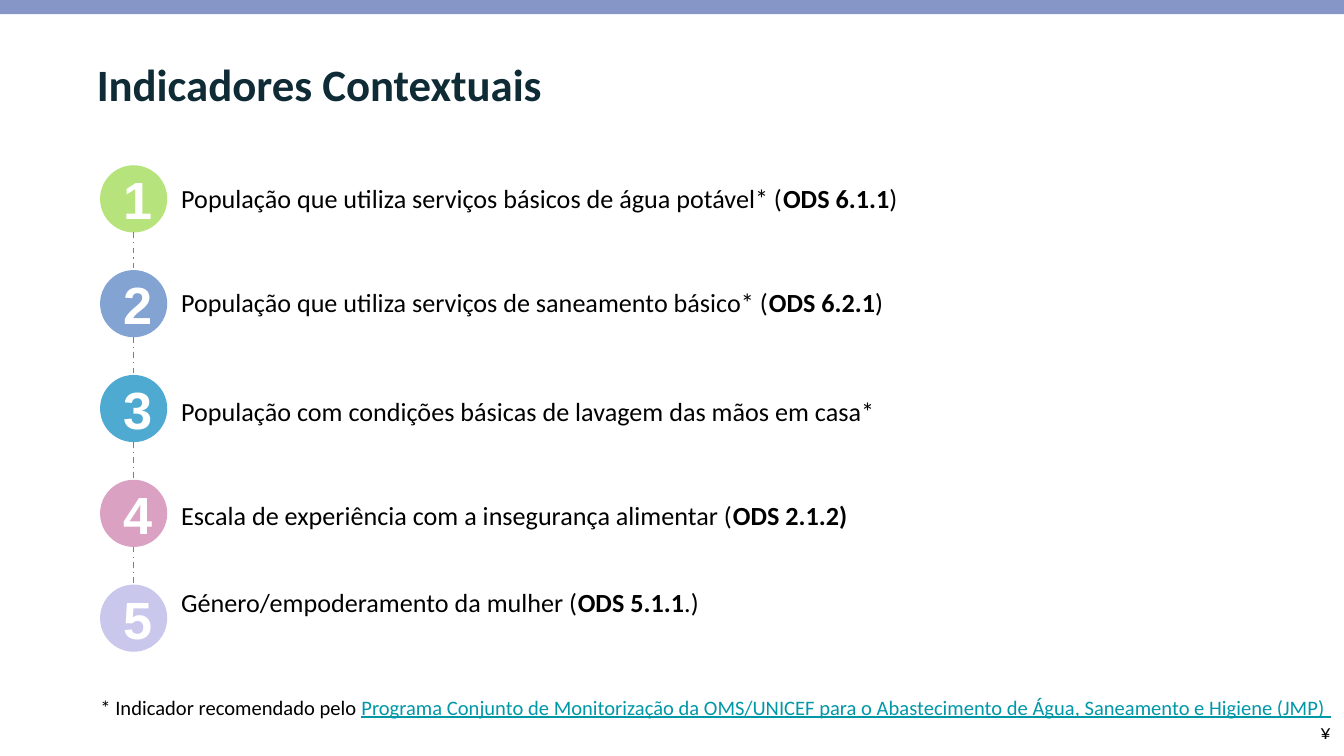
from lxml import etree
from pptx import Presentation
from pptx.dml.color import RGBColor
from pptx.enum.dml import MSO_LINE
from pptx.enum.shapes import MSO_CONNECTOR, MSO_SHAPE
from pptx.enum.text import MSO_ANCHOR, MSO_AUTO_SIZE, PP_ALIGN
from pptx.oxml.ns import qn
from pptx.util import Pt

PX = 4572
LEFT, CENTER, RIGHT = PP_ALIGN.LEFT, PP_ALIGN.CENTER, PP_ALIGN.RIGHT
MIDDLE, TOP = MSO_ANCHOR.MIDDLE, MSO_ANCHOR.TOP
GROW, NO_FIT = MSO_AUTO_SIZE.SHAPE_TO_FIT_TEXT, MSO_AUTO_SIZE.NONE
DASH_DOT = MSO_LINE.DASH_DOT
RECTANGLE, OVAL = MSO_SHAPE.RECTANGLE, MSO_SHAPE.OVAL
STRAIGHT = MSO_CONNECTOR.STRAIGHT

COLORS = {
    "band": "8696C7", "title": "0F2B36", "text": "000000", "number": "FFFFFF",
    "link": "0097A7", "connector": "7F7F7F",
    "water": "B6E37C", "sanitation": "83A3D3", "hygiene": "4FAAD1",
    "food": "DBA1C2", "gender": "CAC7EC",
}
SLIDE_WIDTH, SLIDE_HEIGHT = 2000, 1125
BADGE_LEFT, BADGE_TOP, BADGE_SIZE, BADGE_STEP = 149, 246, 100, 156
INDICATORS = [
    ("water", 261, 1150, 68,
     [("População que utiliza serviços básicos de água potável* (", False),
      ("ODS 6.1.1", True), (")", False)]),
    ("sanitation", 416, 1120, 70,
     [("População que utiliza serviços de saneamento básico* (", False),
      ("ODS 6.2.1", True), (")", False)]),
    ("hygiene", 578, 1200, 68,
     [("População com condições básicas de lavagem das mãos em casa*", False)]),
    ("food", 734, 1102, 68,
     [("Escala de experiência com a insegurança alimentar (", False),
      ("ODS 2.1.2)", True)]),
    ("gender", 863, 1594, 68,
     [("Género/empoderamento da mulher (", False),
      ("ODS 5.1.1", True), (".) ", False)]),
]


def px(*lengths):
    """Turn pixel lengths into EMU."""
    return [length * PX for length in lengths]


def rgb(name):
    """Look up a named colour."""
    return RGBColor.from_string(COLORS[name])


def add_run(paragraph, text, size, color="text", bold=False, underline=False,
            face="Calibri"):
    """Append one formatted run."""
    run = paragraph.add_run()
    run.text = text
    font = run.font
    font.name, font.size = face, Pt(size)
    font.bold, font.underline = bold, underline
    font.color.rgb = rgb(color)


def set_frame(frame, anchor, inset_y=10):
    """Set insets, wrapping and vertical anchor of a text frame."""
    frame.margin_left, frame.margin_right = px(20, 20)
    frame.margin_top, frame.margin_bottom = px(inset_y, inset_y)
    frame.word_wrap = True
    frame.vertical_anchor = anchor


def add_filled(slide, kind, box, color):
    """Add a flat shape without outline."""
    shape = slide.shapes.add_shape(kind, *px(*box))
    shape.shadow.inherit = False
    shape.fill.solid()
    shape.fill.fore_color.rgb = rgb(color)
    shape.line.fill.background()
    return shape


def add_title(slide, text):
    """Fill the title placeholder."""
    title = slide.shapes.title
    title.left, title.top, title.width, title.height = px(124, 64, 1752, 126)
    frame = title.text_frame
    set_frame(frame, TOP, inset_y=20)
    frame.auto_size = NO_FIT
    paragraph = frame.paragraphs[0]
    paragraph.alignment = LEFT
    add_run(paragraph, text, 24, "title", bold=True)


def add_badge(slide, number, top, color):
    """Add a numbered circle."""
    badge = add_filled(slide, OVAL, (BADGE_LEFT, top, BADGE_SIZE, BADGE_SIZE), color)
    set_frame(badge.text_frame, MIDDLE)
    paragraph = badge.text_frame.paragraphs[0]
    paragraph.alignment = CENTER
    add_run(paragraph, str(number), 28, "number", bold=True, face="Arial")


def add_link_line(slide, top, bottom):
    """Join two badges with a dash-dot line."""
    x = BADGE_LEFT + BADGE_SIZE // 2
    connector = slide.shapes.add_connector(STRAIGHT, *px(x, top, x, bottom))
    connector.line.color.rgb = rgb("connector")
    connector.line.width = Pt(0.75)
    connector.line.dash_style = DASH_DOT
    etree.SubElement(connector._element.spPr, qn("a:effectLst"))


def add_text_frame(slide, box):
    """Add a wrapping text box and return its frame."""
    frame = slide.shapes.add_textbox(*px(*box)).text_frame
    set_frame(frame, TOP)
    frame.auto_size = GROW
    return frame


def add_footnote(slide):
    """Add the right-aligned source note."""
    frame = add_text_frame(slide, (86, 1024, 1914, 94))
    note, mark = frame.paragraphs[0], frame.add_paragraph()
    note.alignment = mark.alignment = RIGHT
    add_run(note, "* Indicador recomendado pelo ", 11)
    add_run(note, "Programa Conjunto de Monitorização da OMS/UNICEF para o "
            "Abastecimento de Água, Saneamento e Higiene (JMP) ", 11,
            "link", underline=True)
    add_run(mark, "¥", 11)


def main():
    """Build the contextual indicators slide."""
    deck = Presentation()
    deck.slide_width, deck.slide_height = px(SLIDE_WIDTH, SLIDE_HEIGHT)
    slide = deck.slides.add_slide(deck.slide_layouts[5])
    add_filled(slide, RECTANGLE, (0, 0, SLIDE_WIDTH, 21), "band")
    add_title(slide, "Indicadores Contextuais")
    for index, (topic, text_top, width, height, parts) in enumerate(INDICATORS):
        top = BADGE_TOP + index * BADGE_STEP
        add_badge(slide, index + 1, top, topic)
        if index:
            add_link_line(slide, top - BADGE_STEP + BADGE_SIZE, top)
        frame = add_text_frame(slide, (250, text_top, width, height))
        for text, bold in parts:
            add_run(frame.paragraphs[0], text, 14, bold=bold)
    add_footnote(slide)
    deck.save("out.pptx")


if __name__ == "__main__":
    main()
